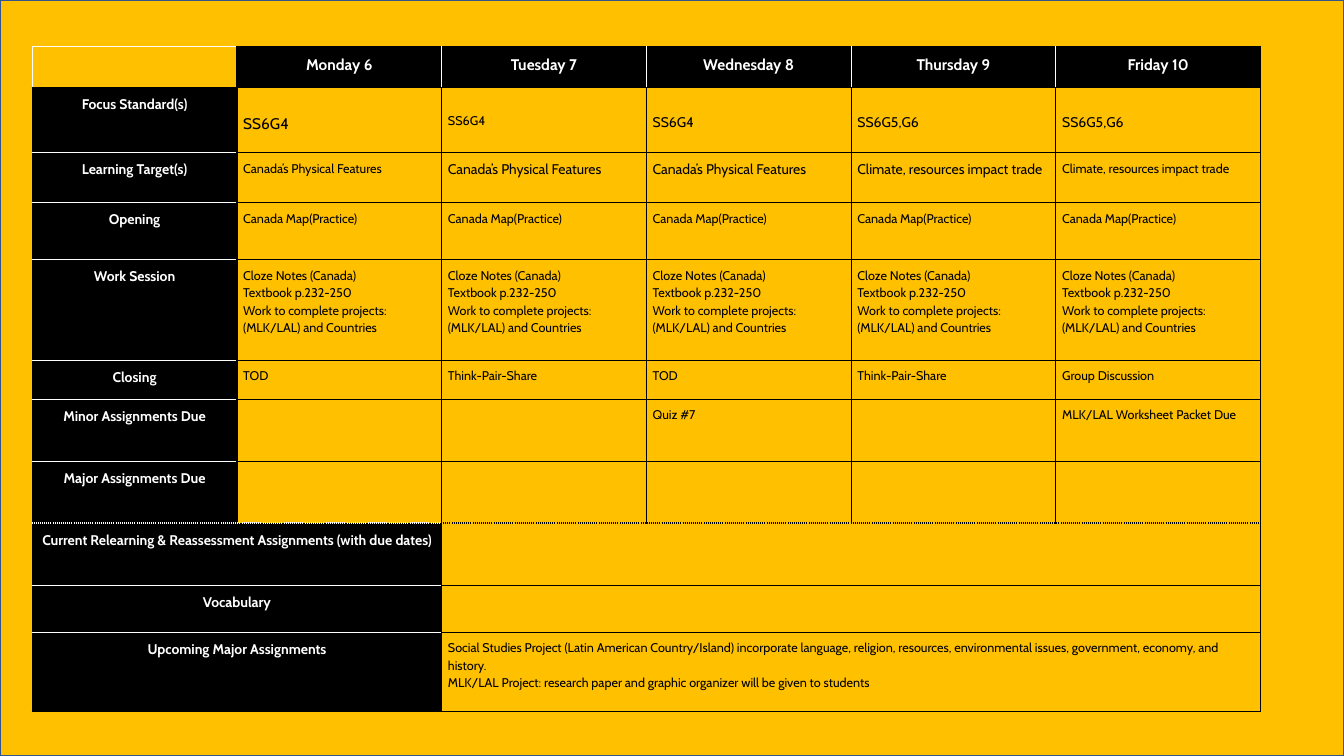
from pptx import Presentation
from pptx.dml.color import RGBColor
from pptx.enum.shapes import MSO_SHAPE
from pptx.enum.text import PP_ALIGN
from pptx.oxml.ns import qn
from pptx.util import Pt
from lxml import etree

RECT = MSO_SHAPE.RECTANGLE
LEFT, MID = PP_ALIGN.LEFT, PP_ALIGN.CENTER
GOLD, BLACK, WHITE, NAVY = "FFC000", "000000", "FFFFFF", "325491"
FONT = "Cabin"

# Content: label, row height, one entry per day
DAYS = ["Monday 6", "Tuesday 7", "Wednesday 8", "Thursday 9", "Friday 10"]
CANADA = "Canada’s Physical Features"
CLIMATE = "Climate, resources impact trade"
WORK = ("Cloze Notes (Canada)\nTextbook p.232-250\n"
        "Work to complete projects:\n(MLK/LAL) and Countries")
PLAN = [
    ("Focus Standard(s)", 46.5, ["SS6G4"] * 3 + ["SS6G5,G6"] * 2),
    ("Learning Target(s)", 35.7, [CANADA] * 3 + [CLIMATE] * 2),
    ("Opening", 40.7, ["Canada Map(Practice)"] * 5),
    ("Work Session", 72, [WORK] * 5),
    ("Closing", 27.8, ["TOD", "Think-Pair-Share", "TOD",
                       "Think-Pair-Share", "Group Discussion"]),
    ("Minor Assignments Due", 44.3,
     ["", "", "Quiz #7", "", "MLK/LAL Worksheet Packet Due"]),
    ("Major Assignments Due", 44.3, [""] * 5),
]
# Content: label, row height, text across the week
WEEK = [
    ("Current Relearning & Reassessment Assignments (with due dates)", 44.3, ""),
    ("Vocabulary", 33.6, ""),
    ("Upcoming Major Assignments", 56.5,
     "Social Studies Project (Latin American Country/Island) incorporate "
     "language, religion, resources, environmental issues, government, "
     "economy, and history.\nMLK/LAL Project: research paper and graphic "
     "organizer will be given to students"),
]
SIZES = {1: [11, 9, 10, 10, 10], 2: [9, 10, 10, 10, 9]}
HEAD_H, COL_W, PAD, DROP = 29.5, 146.25, 4.5, 12.5
ROWS, COLS = 1 + len(PLAN) + len(WEEK), 1 + len(DAYS)
SPLIT = 1 + len(PLAN)


def rgb(code):
    return RGBColor.from_string(code)


def write(cell, text, size=9, color=BLACK, bold=False, align=LEFT, drop=0):
    if not text:
        return
    cell.margin_left = cell.margin_right = cell.margin_bottom = Pt(PAD)
    cell.margin_top = Pt(PAD + drop)
    frame = cell.text_frame
    for i, line in enumerate(text.split("\n")):
        para = frame.add_paragraph() if i else frame.paragraphs[0]
        para.alignment, para.line_spacing = align, 1.15
        run = para.add_run()
        run.text = line
        font = run.font
        font.name, font.size, font.bold = FONT, Pt(size), bold
        font.color.rgb = rgb(color)


def is_label(row, col):
    return row > 0 and col < (2 if row >= SPLIT else 1)


def edges(row, col):
    """Colour of each side of a cell."""
    if row == 0:
        return {"L": BLACK if col == 1 else WHITE,
                "R": BLACK if col in (0, COLS - 1) else WHITE,
                "T": BLACK if col else WHITE, "B": BLACK}
    sides = dict.fromkeys("LRTB", BLACK)
    if is_label(row, col):
        sides["T"] = WHITE if row > 1 else BLACK
        sides["B"] = WHITE if row < ROWS - 1 else BLACK
    return sides


def border(cell, row, col):
    props = cell._tc.get_or_add_tcPr()
    for side, color in edges(row, col).items():
        dotted = (row, side) in ((SPLIT - 1, "B"), (SPLIT, "T"))
        line = etree.SubElement(props, qn("a:ln" + side),
                                w=str(Pt(2.25 if dotted else 1)))
        fill = etree.SubElement(line, qn("a:solidFill"))
        etree.SubElement(fill, qn("a:srgbClr"), val=color)
        etree.SubElement(line, qn("a:prstDash"), val="dot" if dotted else "solid")


deck = Presentation()
deck.slide_width, deck.slide_height = Pt(960), Pt(540)
slide = deck.slides.add_slide(deck.slide_layouts[6])

# Background panel
panel = slide.shapes.add_shape(RECT, 0, 0, Pt(960), Pt(540))
panel.shadow.inherit = False
panel.fill.solid()
panel.fill.fore_color.rgb = rgb(GOLD)
panel.line.color.rgb = rgb(NAVY)
panel.line.width = Pt(1)

# Table grid
highs = [HEAD_H] + [entry[1] for entry in PLAN + WEEK]
grid = slide.shapes.add_table(ROWS, COLS, Pt(23), Pt(33),
                              Pt(COL_W * COLS), Pt(sum(highs))).table
grid.first_row = grid.horz_banding = False
for column in grid.columns:
    column.width = Pt(COL_W)
for row, high in enumerate(highs):
    grid.rows[row].height = Pt(high)
    for col in range(COLS):
        cell = grid.cell(row, col)
        border(cell, row, col)
        if is_label(row, col) or (row == 0 and col):
            cell.fill.solid()
            cell.fill.fore_color.rgb = rgb(BLACK)
        else:
            cell.fill.background()

# Header and daily rows
tag = dict(color=WHITE, bold=True, align=MID)
for col, day in enumerate(DAYS, 1):
    write(grid.cell(0, col), day, size=11, **tag)
for row, (label, _, notes) in enumerate(PLAN, 1):
    write(grid.cell(row, 0), label, size=10, **tag)
    for col, (note, size) in enumerate(zip(notes, SIZES.get(row, [9] * 5)), 1):
        write(grid.cell(row, col), note, size=size, drop=DROP if row == 1 else 0)

# Weekly rows
for row, (label, _, note) in enumerate(WEEK, SPLIT):
    grid.cell(row, 0).merge(grid.cell(row, 1))
    grid.cell(row, 2).merge(grid.cell(row, COLS - 1))
    write(grid.cell(row, 0), label, size=10, **tag)
    write(grid.cell(row, 2), note)

deck.save("out.pptx")
